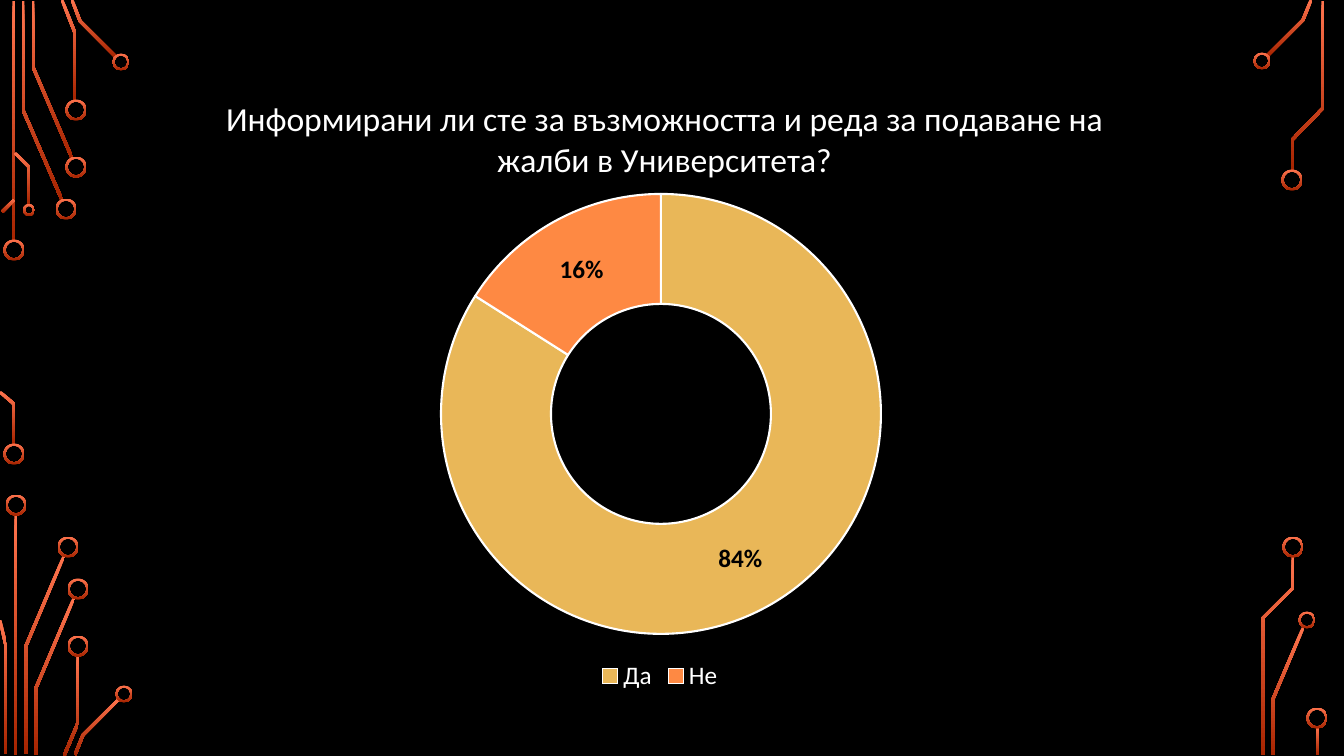
import math

import pptx
import pptx.chart.data
import pptx.dml.color
import pptx.enum.chart
import pptx.enum.shapes
import pptx.enum.text
import pptx.oxml
import pptx.oxml.ns
import pptx.util

TITLE = "Информирани ли сте за възможността и реда за подаване на жалби в Университета?"
ANSWERS = [("Да", 84), ("Не", 16)]

TRACES = [
    [(14, 1), (14, 242)],
    [(62, 200), (23, 110), (23, 1)],
    [(72, 158), (33, 67), (33, 1)],
    [(75, 101), (75, 33), (62, 0)],
    [(116, 57), (80, 21), (72, 0)],
    [(2, 212), (14, 200)],
    [(14, 444), (14, 404), (0, 392)],
    [(29, 205), (29, 167), (15, 153)],
    [(16, 514), (16, 755)],
    [(26, 754), (26, 646), (64, 556)],
    [(6, 754), (6, 646), (0, 620)],
    [(36, 755), (36, 688), (74, 598)],
    [(64, 756), (78, 723), (78, 655)],
    [(75, 755), (83, 735), (119, 699)],
    [(1267, 56), (1303, 20), (1311, 0)],
    [(1273, 755), (1273, 699), (1303, 628)],
    [(1292, 170), (1292, 140), (1323, 108), (1323, 1)],
    [(1263, 755), (1263, 618), (1293, 588), (1293, 556)],
    [(1318, 727), (1318, 755)],
]
RINGS = {
    21: [(14, 250), (14, 454), (66, 209), (76, 167), (76, 110), (16, 505), (68, 547),
         (78, 589), (78, 646), (1292, 180), (1293, 547), (1317, 718)],
    17: [(121, 62), (124, 694), (1262, 61), (1307, 620)],
    12: [(29, 210)],
}
TRACE_WIDTH = 3
RING_WIDTH = 2

SLIDE_SIZE = (1344, 756)
CHART_BOX = (46, 60, 1228, 636)
DOUGHNUT_BOX = (441, 194, 440, 440)
TITLE_CORNER = (220, 90)

THEME = {
    "font": "Calibri",
    "background": "000000",
    "text": "FFFFFF",
    "label": "000000",
    "slices": ["E9B758", "FE8943"],
    "trace": ["FF744E", "A62400"],
    "title_size": 24,
    "body_size": 18,
    "slice_line": 1.5,
}


def px(length):
    return round(length * 914400 / 100.8)


def color(name):
    return pptx.dml.color.RGBColor.from_string(name)


def style_trace(shape):
    shape.shadow.inherit = False
    shape.line.fill.background()
    shape.fill.gradient()
    shape.fill.gradient_angle = 270
    for stop, name in zip(shape.fill.gradient_stops, THEME["trace"]):
        stop.color.rgb = color(name)


def band_outline(points, width):
    normals = []
    for (x1, y1), (x2, y2) in zip(points, points[1:]):
        length = math.hypot(x2 - x1, y2 - y1)
        normals.append(((y1 - y2) / length, (x2 - x1) / length))
    left, right = [], []
    for (x, y), (ax, ay), (bx, by) in zip(points, normals[:1] + normals, normals + normals[-1:]):
        reach = width / 2 / (1 + ax * bx + ay * by)
        dx, dy = (ax + bx) * reach, (ay + by) * reach
        left.append((px(x + dx), px(y + dy)))
        right.append((px(x - dx), px(y - dy)))
    return left + right[::-1]


def add_trace(slide, points):
    outline = band_outline(points, TRACE_WIDTH)
    builder = slide.shapes.build_freeform(*outline[0])
    builder.add_line_segments(outline[1:], close=True)
    style_trace(builder.convert_to_shape())


def add_ring(slide, center, diameter):
    x, y = (px(value - diameter / 2) for value in center)
    shape = slide.shapes.add_shape(
        pptx.enum.shapes.MSO_SHAPE.DONUT, x, y, px(diameter), px(diameter))
    shape.adjustments[0] = RING_WIDTH / diameter
    style_trace(shape)


def style_font(font, size, name, bold=False):
    font.name = THEME["font"]
    font.size = pptx.util.Pt(size)
    font.bold = bold
    font.color.rgb = color(name)


def set_layout(element, index, corner, size=None):
    for layout in element.findall(pptx.oxml.ns.qn("c:layout")):
        element.remove(layout)
    left, top, width, height = CHART_BOX
    fields = [("xMode", "edge"), ("yMode", "edge"),
              ("x", round((corner[0] - left) / width, 4)),
              ("y", round((corner[1] - top) / height, 4))]
    if size:
        fields.insert(0, ("layoutTarget", "inner"))
        fields += [("w", round(size[0] / width, 4)), ("h", round(size[1] / height, 4))]
    body = "".join(f'<c:{tag} val="{value}"/>' for tag, value in fields)
    element.insert(index, pptx.oxml.parse_xml(
        f'<c:layout {pptx.oxml.ns.nsdecls("c")}><c:manualLayout>{body}</c:manualLayout></c:layout>'))


def add_answer_chart(slide):
    data = pptx.chart.data.CategoryChartData()
    data.categories = [answer for answer, share in ANSWERS]
    data.add_series("Series 1", [share for answer, share in ANSWERS])
    chart = slide.shapes.add_chart(
        pptx.enum.chart.XL_CHART_TYPE.DOUGHNUT, *map(px, CHART_BOX), data).chart
    style_font(chart.font, THEME["body_size"], THEME["text"])

    chart.has_title = True
    text_frame = chart.chart_title.text_frame
    text_frame.text = TITLE
    paragraph = text_frame.paragraphs[0]
    paragraph.alignment = pptx.enum.text.PP_ALIGN.CENTER
    style_font(paragraph.font, THEME["title_size"], THEME["text"])
    style_font(paragraph.runs[0].font, THEME["title_size"], THEME["text"])
    chart.chart_title.include_in_layout = False
    set_layout(chart.chart_title.element, 1, TITLE_CORNER)

    chart.has_legend = True
    chart.legend.position = pptx.enum.chart.XL_LEGEND_POSITION.BOTTOM
    chart.legend.include_in_layout = False
    style_font(chart.legend.font, THEME["body_size"], THEME["text"])

    plot = chart.plots[0]
    plot.vary_by_categories = True
    for hole in chart.element.xpath(".//c:holeSize"):
        hole.set("val", "75")
    for index, name in enumerate(THEME["slices"]):
        slice_format = plot.series[0].points[index].format
        slice_format.fill.solid()
        slice_format.fill.fore_color.rgb = color(name)
        slice_format.line.color.rgb = color(THEME["text"])
        slice_format.line.width = pptx.util.Pt(THEME["slice_line"])
    labels = plot.series[0].data_labels
    labels.show_percentage = True
    labels.show_value = False
    labels.number_format = "0%"
    labels.number_format_is_linked = False
    style_font(labels.font, THEME["body_size"], THEME["label"], bold=True)
    set_layout(chart.element.xpath("c:chart/c:plotArea")[0], 0, DOUGHNUT_BOX[:2], DOUGHNUT_BOX[2:])


def main():
    presentation = pptx.Presentation()
    presentation.slide_width, presentation.slide_height = map(px, SLIDE_SIZE)
    slide = presentation.slides.add_slide(presentation.slide_layouts[6])
    slide.background.fill.solid()
    slide.background.fill.fore_color.rgb = color(THEME["background"])
    for points in TRACES:
        add_trace(slide, points)
    for diameter, centers in RINGS.items():
        for center in centers:
            add_ring(slide, center, diameter)
    add_answer_chart(slide)
    presentation.save("out.pptx")


if __name__ == "__main__":
    main()
